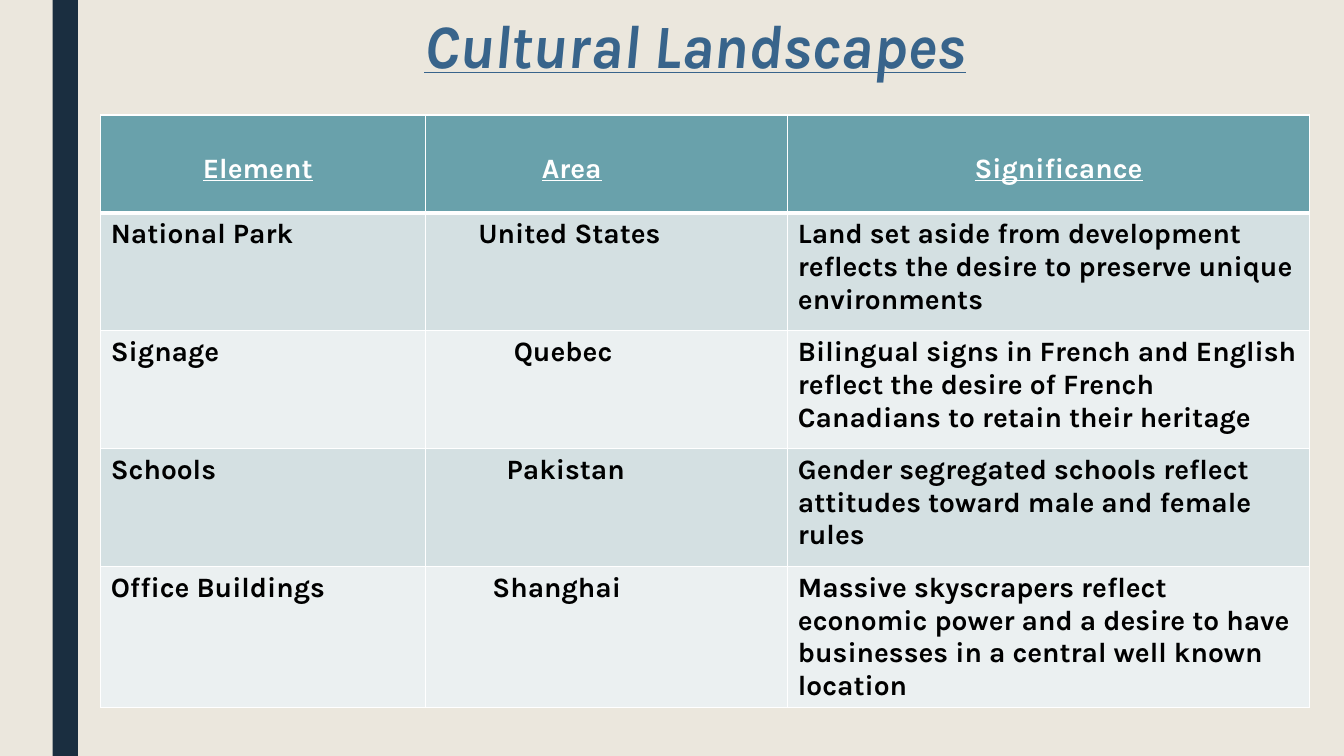
from typing import NamedTuple

from lxml.etree import SubElement
from pptx import Presentation
from pptx.dml.color import RGBColor
from pptx.enum.shapes import MSO_SHAPE
from pptx.enum.text import MSO_ANCHOR, MSO_AUTO_SIZE, PP_ALIGN
from pptx.oxml.ns import qn
from pptx.util import Pt

FONT = "Karla"
CREAM, NAVY, BLUE = "EBE7DD", "1A2E40", "38648B"
WHITE, BLACK = "FFFFFF", "000000"
TEAL, BANDS = "69A1AB", ("D4E0E2", "EBF0F1")
INSET = 7.2
COLUMN_WIDTHS = (232.2, 258.6, 372.5)
HEADER_HEIGHT, ROW_HEIGHT = 69.84, 84.24


class Landscape(NamedTuple):
    element: str
    area: str
    significance: str
    area_inset: float


class Heading(NamedTuple):
    label: str
    inset: float


HEADINGS = (
    Heading("Element", 72.9),
    Heading("Area", 82.9),
    Heading("Significance", 133.4),
)
LANDSCAPES = (
    Landscape("National Park", "United States",
              "Land set aside from development reflects the desire to preserve "
              "unique environments", 37.5),
    Landscape("Signage", "Quebec",
              "Bilingual signs in French and English reflect the desire of French "
              "Canadians to retain their heritage", 62.8),
    Landscape("Schools", "Pakistan",
              "Gender segregated schools reflect attitudes toward male and female "
              "rules", 57.7),
    Landscape("Office Buildings", "Shanghai",
              "Massive skyscrapers reflect economic power and a desire to have "
              "businesses in a central well known location", 47.6),
)


def paint(fill, color: str) -> None:
    fill.solid()
    fill.fore_color.rgb = RGBColor.from_string(color)


def write(frame, text: str, *, size: float = 20, color: str = BLACK,
          italic: bool = False, underline: bool = False,
          line_spacing: float = 1.0) -> None:
    paragraph = frame.paragraphs[0]
    paragraph.alignment = PP_ALIGN.LEFT
    paragraph.line_spacing = line_spacing
    run = paragraph.add_run()
    run.text = text
    font = run.font
    font.name, font.size, font.bold = FONT, Pt(size), True
    font.italic, font.underline = italic, underline
    font.color.rgb = RGBColor.from_string(color)


def add_borders(cell, top: float = 1, bottom: float = 1) -> None:
    properties = cell._tc.get_or_add_tcPr()
    for side, width in (("L", 1), ("R", 1), ("T", top), ("B", bottom)):
        line = SubElement(properties, qn(f"a:ln{side}"), w=str(Pt(width)))
        color = SubElement(SubElement(line, qn("a:solidFill")), qn("a:srgbClr"))
        color.set("val", WHITE)


def add_side_bar(slide) -> None:
    bar = slide.shapes.add_shape(MSO_SHAPE.RECTANGLE, Pt(37.6), 0, Pt(18), Pt(540))
    bar.shadow.inherit = False
    paint(bar.fill, NAVY)
    bar.line.fill.background()


def add_title(slide) -> None:
    title = slide.shapes.title
    title.left, title.top, title.width, title.height = map(Pt, (108, 8, 756, 70.5))
    frame = title.text_frame
    frame.word_wrap = True
    frame.auto_size = MSO_AUTO_SIZE.NONE
    frame.vertical_anchor = MSO_ANCHOR.TOP
    frame.margin_left = Pt(195)
    write(frame, "Cultural Landscapes", size=44, color=BLUE, italic=True,
          underline=True, line_spacing=0.89)


def add_landscape_table(slide) -> None:
    height = HEADER_HEIGHT + ROW_HEIGHT * len(LANDSCAPES)
    table = slide.shapes.add_table(
        len(LANDSCAPES) + 1, len(HEADINGS),
        Pt(72), Pt(82.2), Pt(sum(COLUMN_WIDTHS)), Pt(height)).table
    table.horz_banding = False
    for column, width in zip(table.columns, COLUMN_WIDTHS):
        column.width = Pt(width)

    table.rows[0].height = Pt(HEADER_HEIGHT)
    for column, heading in enumerate(HEADINGS):
        cell = table.cell(0, column)
        add_borders(cell, bottom=3)
        paint(cell.fill, TEAL)
        cell.margin_left, cell.margin_top = Pt(heading.inset), Pt(27)
        write(cell.text_frame, heading.label, color=WHITE, underline=True)

    for row, landscape in enumerate(LANDSCAPES, start=1):
        table.rows[row].height = Pt(ROW_HEIGHT)
        texts = (landscape.element, landscape.area, landscape.significance)
        insets = (INSET, landscape.area_inset, INSET)
        for column, (text, inset) in enumerate(zip(texts, insets)):
            cell = table.cell(row, column)
            add_borders(cell, top=3 if row == 1 else 1)
            paint(cell.fill, BANDS[(row - 1) % 2])
            cell.margin_left = Pt(inset)
            write(cell.text_frame, text)


def main() -> None:
    presentation = Presentation()
    presentation.slide_width, presentation.slide_height = Pt(960), Pt(540)
    slide = presentation.slides.add_slide(presentation.slide_layouts[5])
    paint(slide.background.fill, CREAM)
    add_side_bar(slide)
    add_title(slide)
    add_landscape_table(slide)
    presentation.save("out.pptx")


if __name__ == "__main__":
    main()
